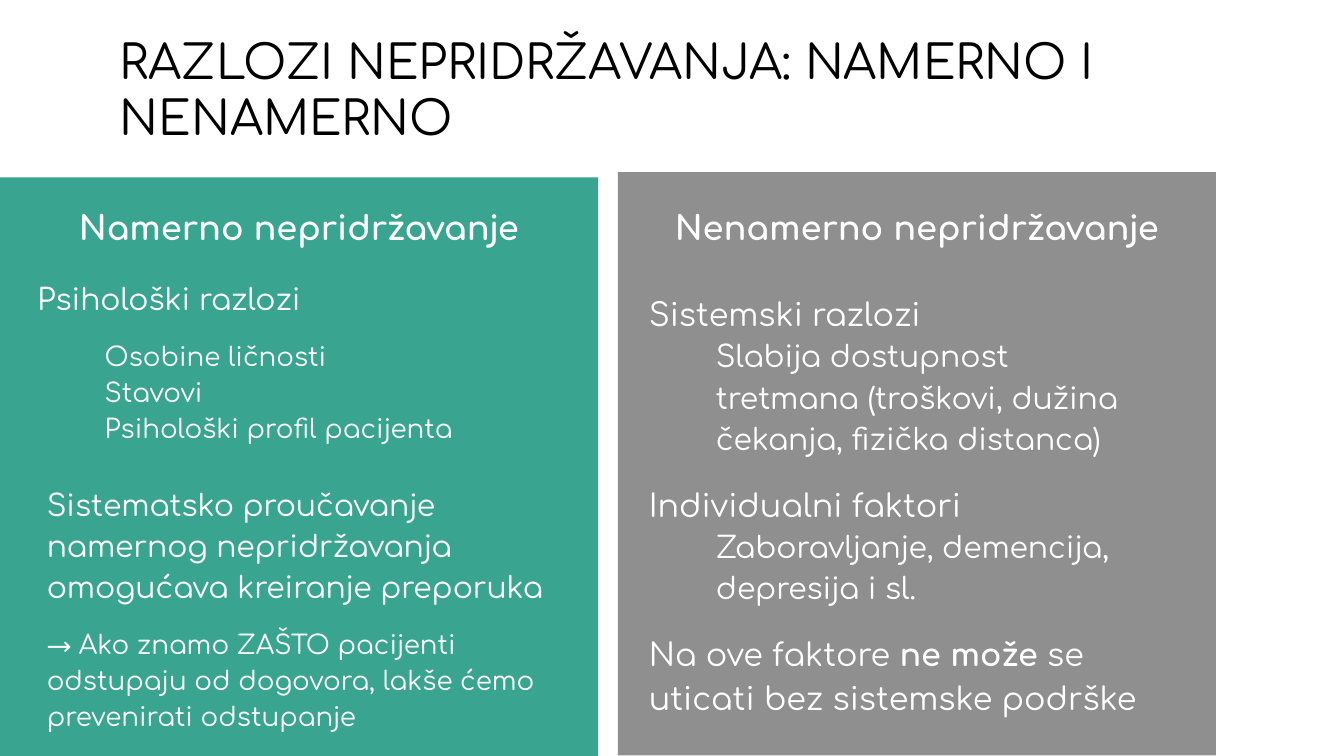
from dataclasses import dataclass

from pptx import Presentation
from pptx.dml.color import RGBColor
from pptx.enum.shapes import MSO_SHAPE
from pptx.enum.text import MSO_ANCHOR, MSO_AUTO_SIZE, PP_ALIGN
from pptx.util import Pt

FONT = "Comfortaa"
BLACK = RGBColor(0x00, 0x00, 0x00)
WHITE = RGBColor(0xFF, 0xFF, 0xFF)
GREEN = RGBColor(0x39, 0xA5, 0x90)
GRAY = RGBColor(0x8F, 0x8F, 0x90)
INSET = Pt(7.2)
PANEL_W, PANEL_H = 320.4, 312.5
HEADING_Y = 103.7


@dataclass
class Para:
    """A paragraph; every second one of its texts is bold."""
    texts: tuple
    size: float
    indent: float = 0
    spacing: float = 1.15
    before: float = 0
    after: float = 0
    align: PP_ALIGN = PP_ALIGN.LEFT


def format_frame(tf):
    tf.word_wrap = True
    tf.auto_size = MSO_AUTO_SIZE.NONE
    tf.vertical_anchor = MSO_ANCHOR.TOP
    tf.margin_left = tf.margin_right = tf.margin_top = tf.margin_bottom = INSET


def add_text(slide, x, y, w, h, paras):
    tf = slide.shapes.add_textbox(Pt(x), Pt(y), Pt(w), Pt(h)).text_frame
    format_frame(tf)
    for i, para in enumerate(paras):
        p = tf.paragraphs[0] if i == 0 else tf.add_paragraph()
        p.alignment = para.align
        p.line_spacing = para.spacing
        p.space_before, p.space_after = Pt(para.before), Pt(para.after)
        if para.indent:
            pPr = p._p.get_or_add_pPr()
            pPr.set("marL", str(Pt(para.indent)))
            pPr.set("indent", "0")
        for n, text in enumerate(para.texts):
            if not text:
                continue
            r = p.add_run()
            r.text = text
            r.font.name, r.font.size = FONT, Pt(para.size)
            r.font.bold = n % 2 == 1
            r.font.color.rgb = WHITE


def add_title(slide, x, y, w, h, text):
    sp = slide.shapes.title
    sp.left, sp.top, sp.width, sp.height = Pt(x), Pt(y), Pt(w), Pt(h)
    tf = sp.text_frame
    tf.text = text
    format_frame(tf)
    p = tf.paragraphs[0]
    p.alignment = PP_ALIGN.LEFT
    font = p.runs[0].font
    font.name, font.size, font.color.rgb = FONT, Pt(25.2), BLACK


def add_panel(slide, x, y, fill, heading, blocks):
    """Place a coloured panel; blocks are (dx, dy, width, height, paragraphs)."""
    sp = slide.shapes.add_shape(MSO_SHAPE.RECTANGLE, Pt(x), Pt(y),
                                Pt(PANEL_W), Pt(PANEL_H))
    sp.shadow.inherit = False
    sp.fill.solid()
    sp.fill.fore_color.rgb = fill
    sp.line.fill.background()
    add_text(slide, x + 17.7, HEADING_Y, 285, 36,
             [Para(("", heading), 18, spacing=1, align=PP_ALIGN.CENTER)])
    for dx, dy, w, h, paras in blocks:
        add_text(slide, x + dx, y + dy, w, h, paras)


def main():
    prs = Presentation()
    prs.slide_width, prs.slide_height = Pt(720), Pt(405)
    slide = prs.slides.add_slide(prs.slide_layouts[5])
    add_title(slide, 57, 10, 661, 45.4,
              "RAZLOZI NEPRIDRŽAVANJA: NAMERNO I NENAMERNO")

    add_panel(slide, 0, 95, GREEN, "Namerno nepridržavanje", [
        (13, 48.3, 285, 102, [
            Para(("Psihološki razlozi",), 16, spacing=1),
            Para(("Osobine ličnosti",), 14, indent=36, before=10),
            Para(("Stavovi",), 14, indent=36),
            Para(("Psihološki profil pacijenta",), 14, indent=36),
        ]),
        (18, 155.6, 306.7, 150, [
            Para(("Sistematsko proučavanje namernog nepridržavanja "
                  "omogućava kreiranje preporuka",), 16, after=10),
            Para(("→ Ako znamo ZAŠTO pacijenti odstupaju od dogovora, "
                  "lakše ćemo prevenirati odstupanje",), 14),
        ]),
    ])

    add_panel(slide, 331, 92.2, GRAY, "Nenamerno nepridržavanje", [
        (9.5, 55.4, 285, 102, [
            Para(("Sistemski razlozi",), 17),
            Para(("Slabija dostupnost tretmana (troškovi, dužina čekanja, "
                  "fizička distanca)",), 16, indent=36),
        ]),
        (9.5, 157.6, 285, 80, [
            Para(("Individualni faktori",), 17),
            Para(("Zaboravljanje, demencija, depresija i sl.",), 16, indent=36),
        ]),
        (9.5, 237.6, 301, 59, [
            Para(("Na ove faktore ", "ne može ",
                  "se uticati bez sistemske podrške"), 17),
        ]),
    ])
    prs.save("out.pptx")


if __name__ == "__main__":
    main()
